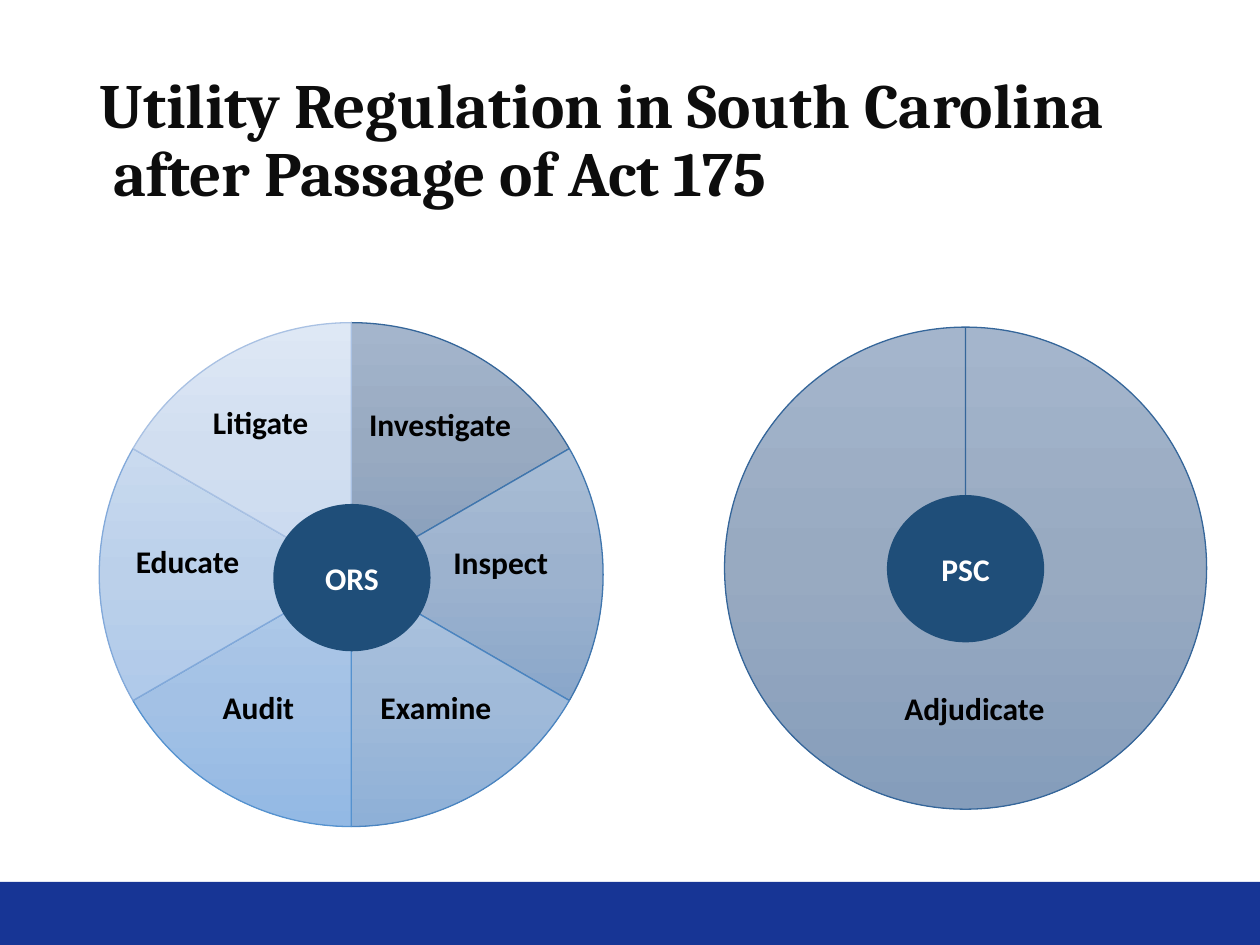
from pptx import Presentation
from pptx.chart.data import CategoryChartData
from pptx.dml.color import RGBColor
from pptx.enum.chart import XL_CHART_TYPE
from pptx.enum.shapes import MSO_SHAPE
from pptx.enum.text import MSO_ANCHOR, PP_ALIGN
from pptx.oxml import parse_xml
from pptx.oxml.ns import nsdecls, qn
from pptx.util import Cm, Pt

TITLE = "Utility Regulation in South Carolina\v after Passage of Act 175"
SLICES = [
    (("A4B5CC", "98AAC1", "859DBB"), "35669A"),
    (("A9BDD5", "9CB2CE", "8AA7CA"), "3F76AE"),
    (("ADC4DF", "A0BAD9", "8EB0D7"), "4A84C0"),
    (("B1CBE9", "A3C1E5", "93B9E4"), "5592CF"),
    (("C9DAEF", "BBD0EA", "B0CAEA"), "82A9DA"),
    (("DEE8F5", "D1DEF0", "CADAF0"), "A9C1E3"),
]
PIES = [
    {"frame": (-0.64, 6.15, 15.44, 10.87), "diameter": 10.16, "value": 17, "slices": SLICES},
    {"frame": (11.63, 6.25, 15.67, 10.41), "diameter": 9.72, "value": 100, "slices": SLICES[:1]},
]
HUBS = [("ORS", 5.51, 10.16), ("PSC", 17.88, 9.98)]
HUB_SIZE = (3.17, 2.97)
LABELS = [
    ("Adjudicate", 17.98, 13.77, 3.38),
    ("Litigate", 4.04, 8.0, 2.97),
    ("Investigate", 7.19, 8.05, 3.48),
    ("Inspect", 8.89, 10.82, 2.97),
    ("Examine", 7.42, 13.74, 2.97),
    ("Audit", 4.24, 13.74, 2.97),
    ("Educate", 2.49, 10.8, 2.97),
]
LABEL_HEIGHT = 0.84


def color(value):
    return RGBColor.from_string(value)


def lengths(*values):
    return [Cm(value) for value in values]


def write(shape, text, size=18, font="Calibri", ink="000000",
          align=PP_ALIGN.LEFT, anchor=MSO_ANCHOR.TOP, spacing=None):
    """Fill a shape with one formatted bold paragraph."""
    frame = shape.text_frame
    frame.word_wrap = True
    frame.vertical_anchor = anchor
    frame.text = text
    para = frame.paragraphs[0]
    para.alignment = align
    para.line_spacing = spacing
    for span in para.runs:
        span.font.size = Pt(size)
        span.font.name = font
        span.font.bold = True
        span.font.color.rgb = color(ink)


def add_solid(page, kind, fill, *place):
    shape = page.shapes.add_shape(kind, *lengths(*place))
    shape.shadow.inherit = False
    shape.fill.solid()
    shape.fill.fore_color.rgb = color(fill)
    shape.line.fill.background()
    return shape


def set_plot_size(chart, width, height):
    plot_area = chart._chartSpace.chart.plotArea
    for layout in plot_area.findall(qn("c:layout")):
        plot_area.remove(layout)
    parts = [("x", (1 - width) / 2), ("y", (1 - height) / 2), ("w", width), ("h", height)]
    modes = '<c:layoutTarget val="inner"/><c:xMode val="edge"/><c:yMode val="edge"/>'
    values = "".join(f'<c:{name} val="{value:.4f}"/>' for name, value in parts)
    plot_area.insert(0, parse_xml(
        f'<c:layout {nsdecls("c")}><c:manualLayout>{modes}{values}</c:manualLayout></c:layout>'))


def set_stops(stop_list, colors):
    for stop in list(stop_list):
        stop_list.remove(stop)
    for index, value in enumerate(colors):
        stop_list.append(parse_xml(
            f'<a:gs {nsdecls("a")} pos="{index * 50000}"><a:srgbClr val="{value}"/></a:gs>'))


def add_pie(page, frame, diameter, value, slices):
    data = CategoryChartData()
    data.categories = [str(number) for number in range(1, len(slices) + 1)]
    data.add_series("Series 1", [value] * len(slices))
    chart = page.shapes.add_chart(XL_CHART_TYPE.PIE, *lengths(*frame), data).chart
    chart.has_title = False
    chart.has_legend = False
    chart.font.name = "Calibri"
    chart.font.size = Pt(10)
    chart.font.color.rgb = color("000000")
    plot = chart.plots[0]
    plot.vary_by_categories = True
    for index, (_, outline) in enumerate(slices):
        look = plot.series[0].points[index].format
        look.fill.gradient()
        look.fill.gradient_angle = 270
        look.line.color.rgb = color(outline)
        look.line.width = Pt(0.75)
    stop_lists = chart._chartSpace.iter(qn("a:gsLst"))
    for stop_list, (colors, _) in zip(list(stop_lists), slices):
        set_stops(stop_list, colors)
    set_plot_size(chart, diameter / frame[2], diameter / frame[3])


def main():
    deck = Presentation()
    deck.slide_width, deck.slide_height = lengths(25.4, 19.05)
    page = deck.slides.add_slide(deck.slide_layouts[5])
    add_solid(page, MSO_SHAPE.RECTANGLE, "173595", 0, 17.78, 25.4, 1.27)

    title = page.shapes.title
    title.left, title.top, title.width, title.height = lengths(1.75, 1.02, 21.89, 3.68)
    write(title, TITLE, size=36, font="Cambria", ink="0D0D0D",
          anchor=MSO_ANCHOR.MIDDLE, spacing=0.9)

    for pie in PIES:
        add_pie(page, **pie)
    for text, left, top in HUBS:
        hub = add_solid(page, MSO_SHAPE.OVAL, "1F4E79", left, top, *HUB_SIZE)
        write(hub, text, ink="FFFFFF", align=PP_ALIGN.CENTER, anchor=MSO_ANCHOR.MIDDLE)
    for text, left, top, width in LABELS:
        box = page.shapes.add_textbox(*lengths(left, top, width, LABEL_HEIGHT))
        write(box, text)
    deck.save("out.pptx")


if __name__ == "__main__":
    main()
